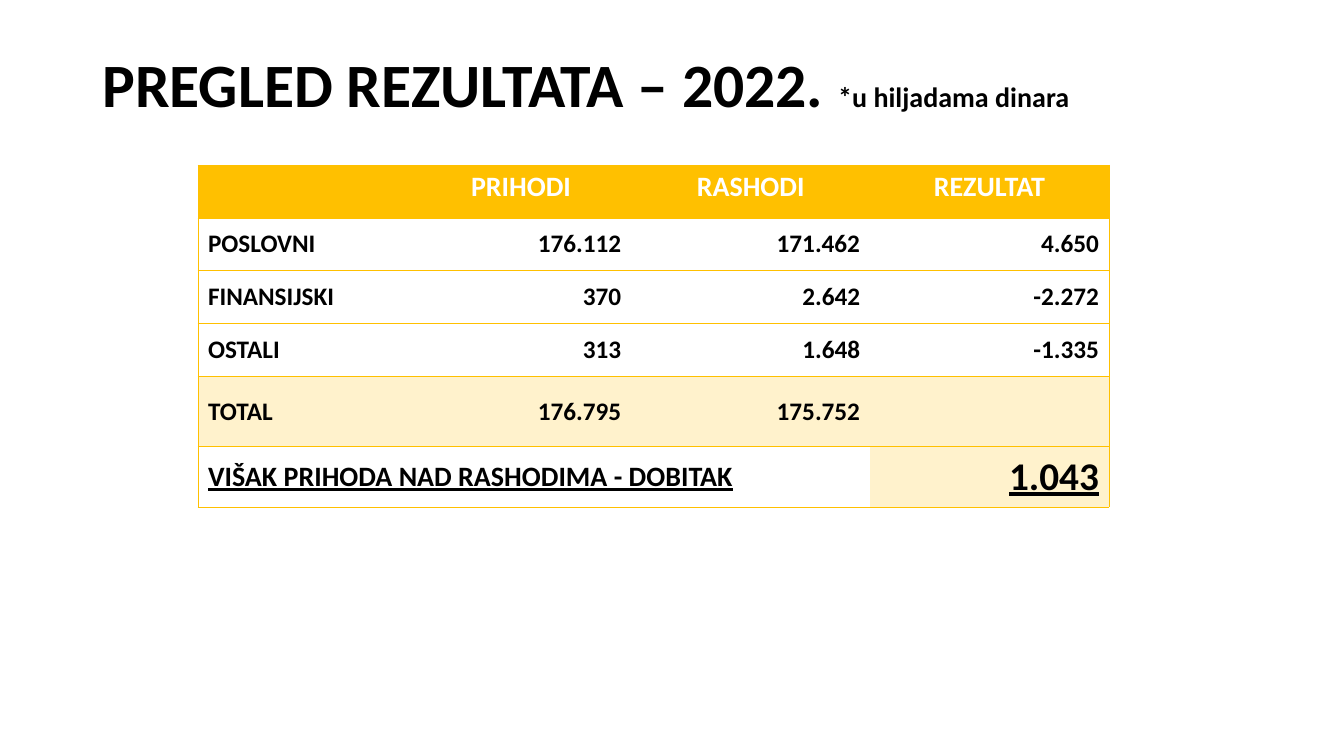
from lxml.etree import SubElement
from pptx import Presentation
from pptx.dml.color import RGBColor
from pptx.enum.text import MSO_ANCHOR, PP_ALIGN
from pptx.oxml.ns import qn
from pptx.util import Pt

TITLE = "PREGLED REZULTATA – 2022. "
NOTE = "*u hiljadama dinara"
ROWS = [
    ("", "PRIHODI", "RASHODI", "REZULTAT"),
    ("POSLOVNI", "176.112", "171.462", "4.650"),
    ("FINANSIJSKI", "370", "2.642", "-2.272"),
    ("OSTALI", "313", "1.648", "-1.335"),
    ("TOTAL", "176.795", "175.752", ""),
    ("VIŠAK PRIHODA NAD RASHODIMA - DOBITAK", "", "", "1.043"),
]
WIDTHS = [152, 157.6, 170.6, 170.6]
HEIGHTS = [37.7] * 4 + [50.4, 43]
GOLD, CREAM, WHITE, BLACK = "FFC000", "FFF2CC", "FFFFFF", "000000"
TOTAL, LAST = 4, 5


def color(code):
    return RGBColor.from_string(code)


def write(para, text, size=18, ink=BLACK, line=False, align=PP_ALIGN.LEFT):
    para.alignment = align
    if not text:
        para.font.size = Pt(size)
        return
    run = para.add_run()
    run.text = text
    font = run.font
    font.name, font.size, font.bold = "Calibri", Pt(size), True
    font.color.rgb = color(ink)
    if line:
        font.underline = True


def edge(cell, sides):
    props = cell._tc.get_or_add_tcPr()
    for side in "LRTB":
        line = SubElement(props, qn("a:ln" + side), w=str(Pt(0.5)))
        if side in sides:
            fill = SubElement(line, qn("a:solidFill"))
            SubElement(fill, qn("a:srgbClr"), val=GOLD)
        else:
            SubElement(line, qn("a:noFill"))


def look(row, col):
    if row == 0:
        return GOLD, dict(size=20, ink=WHITE, align=PP_ALIGN.CENTER)
    style = dict(align=PP_ALIGN.RIGHT if col else PP_ALIGN.LEFT)
    if row == LAST:
        style.update(size=28 if col == 3 else 20, line=True)
    tint = row == TOTAL or (row == LAST and col == 3)
    return CREAM if tint else WHITE, style


deck = Presentation()
deck.slide_width, deck.slide_height = Pt(960), Pt(540)
slide = deck.slides.add_slide(deck.slide_layouts[6])

frame = slide.shapes.add_textbox(Pt(66), Pt(28.8), Pt(828), Pt(67)).text_frame
frame.word_wrap = True
frame.vertical_anchor = MSO_ANCHOR.MIDDLE
head = frame.paragraphs[0]
head.line_spacing = 0.9
write(head, TITLE, size=44)
write(head, NOTE, size=20)

table = slide.shapes.add_table(
    len(ROWS), len(WIDTHS), Pt(141.4), Pt(118),
    Pt(sum(WIDTHS)), Pt(sum(HEIGHTS))).table
table.horz_banding = False
for part, width in zip(table.columns, WIDTHS):
    part.width = Pt(width)
for part, height in zip(table.rows, HEIGHTS):
    part.height = Pt(height)
table.cell(LAST, 0).merge(table.cell(LAST, 2))

for row, texts in enumerate(ROWS):
    for col, text in enumerate(texts):
        cell = table.cell(row, col)
        edge(cell, "TB" + {0: "L", 3: "R"}.get(col, ""))
        back, style = look(row, col)
        cell.fill.solid()
        cell.fill.fore_color.rgb = color(back)
        cell.vertical_anchor = MSO_ANCHOR.MIDDLE if row else MSO_ANCHOR.TOP
        write(cell.text_frame.paragraphs[0], text, **style)

deck.save("out.pptx")
